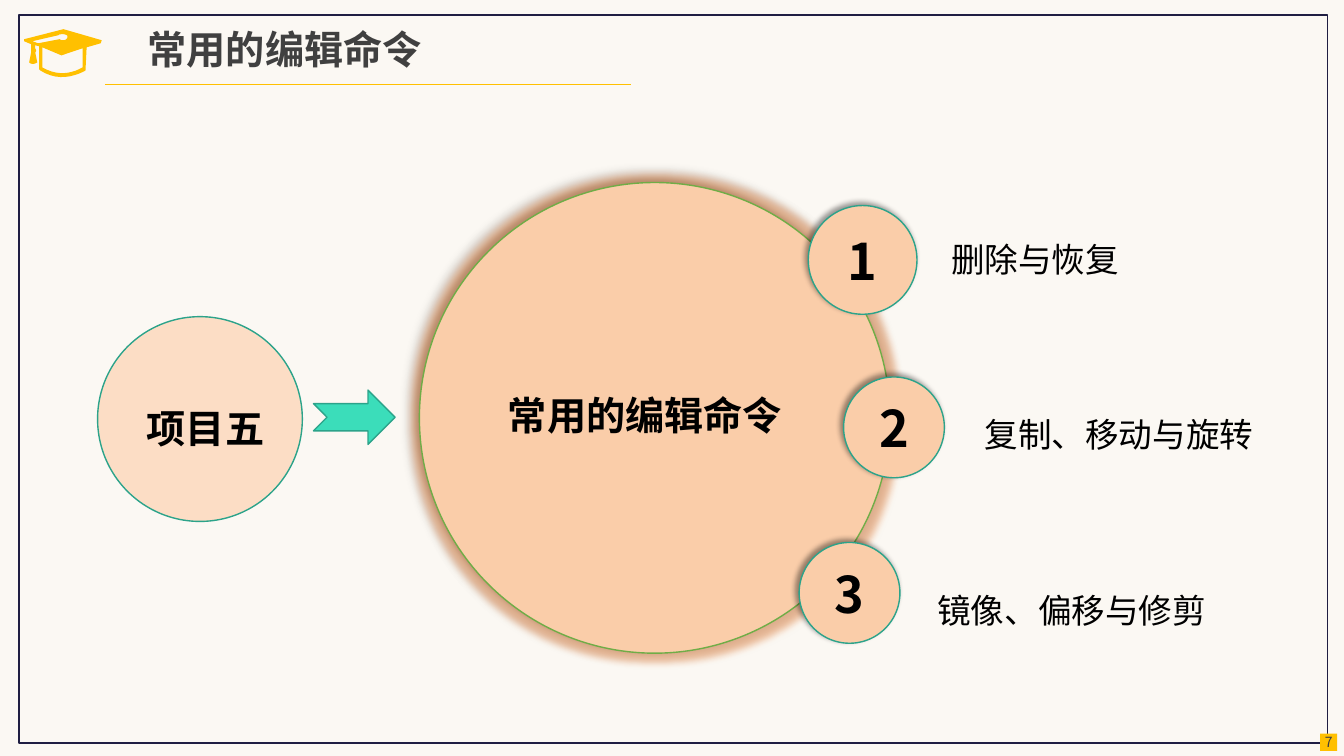
from lxml import etree
from pptx import Presentation
from pptx.dml.color import RGBColor
from pptx.enum.shapes import MSO_CONNECTOR, MSO_SHAPE
from pptx.enum.text import MSO_ANCHOR, PP_ALIGN
from pptx.oxml.ns import qn
from pptx.util import Cm, Pt

CIRCLE = MSO_SHAPE.FLOWCHART_CONNECTOR
RECTANGLE = MSO_SHAPE.RECTANGLE
ARROW = MSO_SHAPE.NOTCHED_RIGHT_ARROW
STRAIGHT = MSO_CONNECTOR.STRAIGHT
CENTER = PP_ALIGN.CENTER
TOP, MIDDLE = MSO_ANCHOR.TOP, MSO_ANCHOR.MIDDLE

FONT = "Noto Sans CJK SC"
COLORS = {
    "background": "FBF8F3", "frame": "1F1E42", "gold": "FFC000",
    "title": "404040", "text": "000000", "project": "FCDDC5",
    "topic": "FACDA9", "topic_line": "70AD47", "teal": "2CA38A",
    "arrow": "3BDDBA", "shadow": "000000", "glow": "ED7D31",
}

# Boxes are left, top, width, height in cm
TITLE = ("常用的编辑命令", (3.43, 0.64, 7.49, 1.32))
PAGE = ("7", (33.27, 18.49, 0.43, 0.43))
FRAME_BOX = (0.48, 0.38, 32.97, 18.34)
RULE = (2.64, 2.13, 15.9, 2.13)
PROJECT_BOX = (2.46, 7.98, 5.16, 5.16)
TOPIC_BOX = (10.57, 4.6, 11.86, 11.86)
ARROW_BOX = (7.9, 9.83, 2.06, 1.37)
HEADINGS = [
    ("项目五", (3.45, 9.83, 3.68, 2.11)),
    ("常用的编辑命令", (12.55, 9.5, 7.82, 2.64)),
]
# Number, circle (left, top, diameter), label, label (left, top)
ITEMS = [
    ("1", (20.37, 5.18, 2.74), "删除与恢复", (23.72, 5.69)),
    ("2", (21.26, 9.5, 2.54), "复制、移动与旋转", (24.56, 10.11)),
    ("3", (20.14, 13.67, 2.54), "镜像、偏移与修剪", (23.37, 14.53)),
]
LABEL_SIZE = (8.6, 2.11)

# Graduation cap: pairs are corners, sextuples are cubic curves
CAP_UNIT = 0.0254
CAP_STEPS = 10
CAP = [
    [(82, 48), (82, 67), (71, 73, 58, 76, 42, 67), (42, 47), (61, 55)],
    [(31, 52), (29, 62), (31, 64, 34, 64, 37, 62), (35, 52),
     (35, 52, 36, 51, 36, 50), (35, 48), (35, 45), (39, 46), (39, 69),
     (40, 70), (57, 81, 74, 76, 85, 70), (85, 68), (86, 47), (100, 43),
     (101, 40), (63, 29), (24, 39), (24, 41), (31, 44), (31, 50)],
    [(38, 43), (32, 41), (58, 35), (59, 34, 61, 34, 62, 34),
     (65, 34, 67, 35, 67, 36), (67, 39, 65, 40, 62, 40),
     (61, 40, 59, 39, 59, 39)],
]


def rgb(name):
    return RGBColor.from_string(COLORS[name])


def add_color(effect, name, alpha):
    color = etree.SubElement(effect, qn("a:srgbClr"), val=COLORS[name])
    etree.SubElement(color, qn("a:alpha"), val=str(alpha * 1000))


def add_effects(sp, glow=False):
    """Give a shape an upper-left shadow and, if asked, an orange glow."""
    effects = sp._element.spPr.find(qn("a:effectLst"))
    if glow:
        halo = etree.SubElement(effects, qn("a:glow"), rad=str(Pt(11)))
        add_color(halo, "glow", 40)
    shadow = etree.SubElement(
        effects, qn("a:outerShdw"), blurRad=str(Pt(4)), dist=str(Pt(3)),
        dir=str(225 * 60000), algn="br", rotWithShape="0")
    add_color(shadow, "shadow", 40)


def paint(sp, fill=None, line=None):
    sp.shadow.inherit = False
    if fill:
        sp.fill.solid()
        sp.fill.fore_color.rgb = rgb(fill)
    else:
        sp.fill.background()
    if line:
        sp.line.color.rgb = rgb(line)
        sp.line.width = Pt(1)
    else:
        sp.line.fill.background()


def add_shape(s, kind, box, fill=None, line=None):
    sp = s.shapes.add_shape(kind, *map(Cm, box))
    paint(sp, fill, line)
    return sp


def write(sp, text, size, color="text", bold=False, align=None,
          spacing=None, anchor=TOP, wrap=True):
    tf = sp.text_frame
    tf.text = text
    tf.word_wrap = wrap
    tf.vertical_anchor = anchor
    p = tf.paragraphs[0]
    p.alignment = align
    p.line_spacing = spacing
    font = p.runs[0].font
    font.name = FONT
    font.size = Pt(size)
    font.bold = bold
    font.color.rgb = rgb(color)
    etree.SubElement(font._element, qn("a:ea"), typeface=FONT)


def add_text(s, text, box, size, bold=False):
    write(s.shapes.add_textbox(*map(Cm, box)), text, size, bold=bold, spacing=1.2)


def outline_points(segments):
    """Turn corners and cubic curves into points in tenths of a cap unit."""
    points = []
    for seg in segments:
        if len(seg) == 2:
            points.append((seg[0] * 10, seg[1] * 10))
            continue
        x0, y0 = points[-1]
        x1, y1, x2, y2, x3, y3 = (v * 10 for v in seg)
        for i in range(1, CAP_STEPS + 1):
            t = i / CAP_STEPS
            a, b, c, d = (1 - t) ** 3, 3 * t * (1 - t) ** 2, 3 * t * t * (1 - t), t ** 3
            points.append((a * x0 + b * x1 + c * x2 + d * x3,
                           a * y0 + b * y1 + c * y2 + d * y3))
    return points


def add_cap(s):
    first, *others = [outline_points(segments) for segments in CAP]
    builder = s.shapes.build_freeform(*first[0], scale=Cm(CAP_UNIT / 10))
    builder.add_line_segments(first[1:], close=True)
    for points in others:
        builder.move_to(*points[0])
        builder.add_line_segments(points[1:], close=True)
    paint(builder.convert_to_shape(), "gold")


def add_rule(s):
    rule = s.shapes.add_connector(STRAIGHT, *map(Cm, RULE))
    rule.line.color.rgb = rgb("gold")
    rule.line.width = Pt(0.5)
    etree.SubElement(rule._element.spPr, qn("a:effectLst"))


def add_header(s):
    text, box = TITLE
    title = s.shapes.title
    title.left, title.top, title.width, title.height = map(Cm, box)
    write(title, text, 28, "title", True, CENTER, Pt(30), wrap=False)
    add_shape(s, RECTANGLE, FRAME_BOX, line="frame")
    add_rule(s)
    add_cap(s)


def add_page_number(s):
    text, box = PAGE
    sp = add_shape(s, RECTANGLE, box, "gold")
    tf = sp.text_frame
    tf.margin_left = tf.margin_right = tf.margin_top = tf.margin_bottom = 0
    write(sp, text, 10, "title", align=CENTER, anchor=MIDDLE, wrap=False)


def add_diagram(s):
    add_shape(s, CIRCLE, PROJECT_BOX, "project", "teal")
    add_effects(add_shape(s, CIRCLE, TOPIC_BOX, "topic", "topic_line"), glow=True)
    add_shape(s, ARROW, ARROW_BOX, "arrow", "teal")
    for text, box in HEADINGS:
        add_text(s, text, box, 28, bold=True)
    for number, (left, top, size), label, corner in ITEMS:
        sp = add_shape(s, CIRCLE, (left, top, size, size), "topic", "teal")
        add_effects(sp)
        write(sp, number, 36, bold=True, align=CENTER, anchor=MIDDLE)
        add_text(s, label, corner + LABEL_SIZE, 24)


def main():
    prs = Presentation()
    prs.slide_width, prs.slide_height = Cm(33.87), Cm(19.05)
    s = prs.slides.add_slide(prs.slide_layouts[5])
    s.background.fill.solid()
    s.background.fill.fore_color.rgb = rgb("background")
    add_header(s)
    add_page_number(s)
    add_diagram(s)
    prs.save("out.pptx")


if __name__ == "__main__":
    main()
